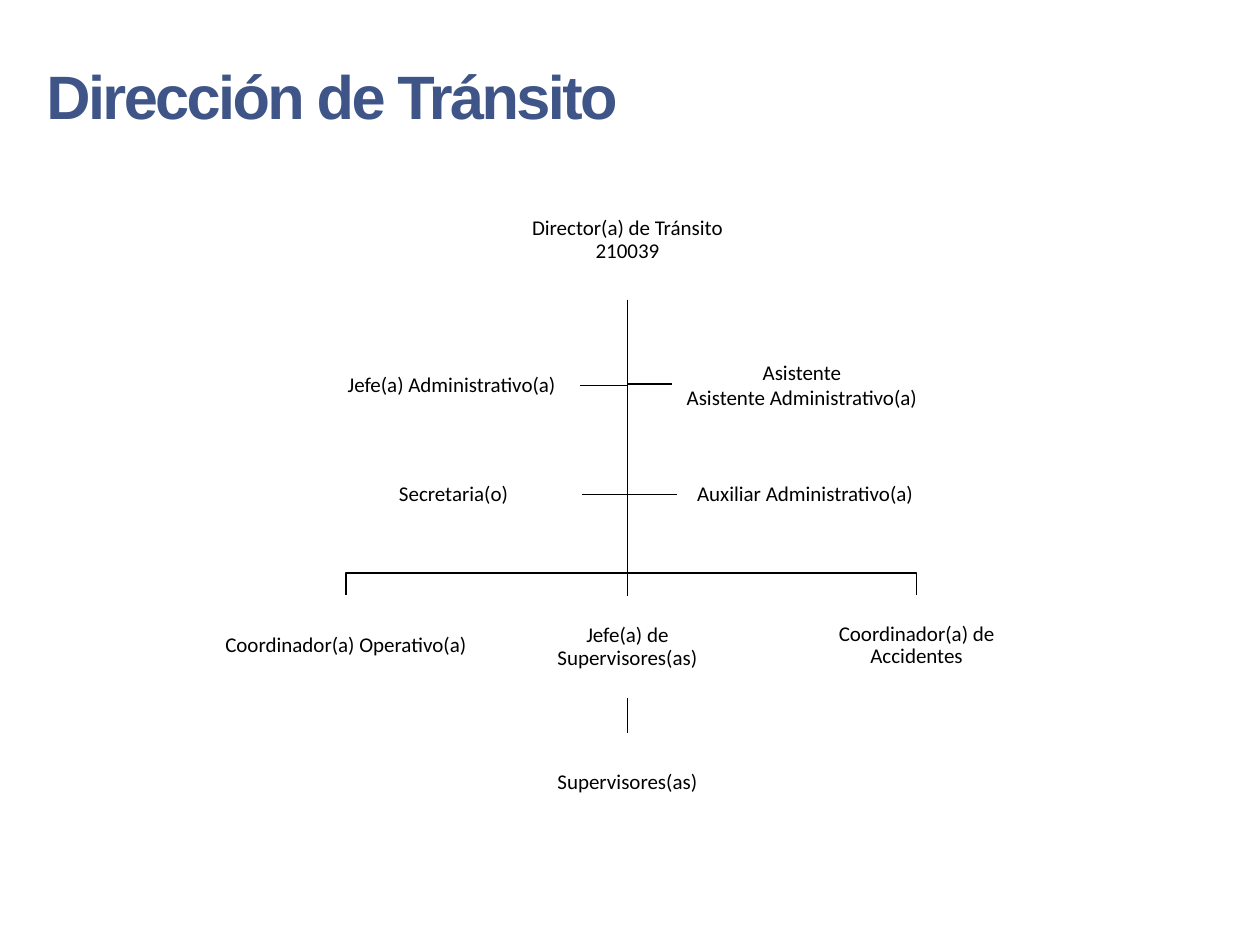
import dataclasses

import pptx
import pptx.dml.color
import pptx.enum.shapes
import pptx.enum.text
import pptx.oxml.ns
import pptx.util
from lxml import etree

Inches = pptx.util.Inches
Pt = pptx.util.Pt
Rgb = pptx.dml.color.RGBColor
Align = pptx.enum.text.PP_ALIGN
Anchor = pptx.enum.text.MSO_ANCHOR
Kind = pptx.enum.shapes.MSO_SHAPE
Wire = pptx.enum.shapes.MSO_CONNECTOR
TOP, LEFT, BOTTOM, RIGHT = range(4)


@dataclasses.dataclass(frozen=True)
class Theme:
    """Colours, fonts and sizes of the slide."""
    blue: Rgb = Rgb(0x3F, 0x55, 0x88)
    ink: Rgb = Rgb(0, 0, 0)
    paper: Rgb = Rgb(255, 255, 255)
    head: str = "Arial"
    body: str = "Calibri"
    big: int = 35
    small: int = 12
    rule: int = 1


THEME = Theme()

POSTS = {
    "director": (2.1, 0, 2.22, 0.95, 0.9, "Director(a) de Tránsito\n210039"),
    "admin": (0.8, 1.23, 2.03, 0.8, 0.9, "Jefe(a) Administrativo(a)"),
    "assistant": (3.56, 1.22, 2.07, 0.8, 1.0, "Asistente\nAsistente Administrativo(a)"),
    "clerk": (0.81, 2.21, 2.04, 0.57, 0.9, "Secretaria(o)"),
    "helper": (3.6, 2.21, 2.04, 0.57, 0.9, "Auxiliar Administrativo(a)"),
    "field": (0, 3.29, 1.95, 0.81, 0.9, "Coordinador(a) Operativo(a)"),
    "chief": (2.24, 3.3, 1.94, 0.81, 0.9, "Jefe(a) de\nSupervisores(as)"),
    "crash": (4.53, 3.29, 1.95, 0.81, 0.9, "Coordinador(a) de\nAccidentes"),
    "crew": (2.24, 4.39, 1.94, 0.78, 0.9, "Supervisores(as)"),
}

LINKS = (("director", "chief"), ("chief", "crew"))
SIDES = {
    "clerk": RIGHT, "assistant": LEFT, "helper": LEFT, "admin": RIGHT,
    "crash": TOP, "field": TOP,
}


def apply(thing, **style):
    """Set each named attribute on an object."""
    for name, value in style.items():
        setattr(thing, name, value)


def title(slide, box, words):
    """Place the slide title in its box."""
    frame = slide.shapes.add_textbox(*map(Inches, box)).text_frame
    frame.word_wrap = True
    run = frame.paragraphs[0].add_run()
    run.text = words
    apply(run.font, name=THEME.head, size=Pt(THEME.big), bold=True)
    run.font.color.rgb = THEME.blue
    run.font._element.set("spc", "-150")


def post(slide, box, lead, words):
    """Place one post of the chart as a white box with centred lines."""
    shape = slide.shapes.add_shape(Kind.RECTANGLE, *map(Inches, box))
    shape.shadow.inherit = False
    shape.fill.solid()
    shape.fill.fore_color.rgb = THEME.paper
    shape.line.fill.background()
    frame = shape.text_frame
    pad = Inches(0.01)
    apply(frame, word_wrap=True, vertical_anchor=Anchor.MIDDLE, text=words,
          margin_left=pad, margin_right=pad, margin_top=pad, margin_bottom=pad)
    for para in frame.paragraphs:
        apply(para, alignment=Align.CENTER, line_spacing=lead)
        apply(para.font, name=THEME.body, size=Pt(THEME.small))
        para.font.color.rgb = THEME.ink
    return shape


def ink(line):
    """Give a line the chart's colour and width."""
    line.color.rgb = THEME.ink
    line.width = Pt(THEME.rule)


def link(slide, upper, lower):
    """Join two stacked posts with a straight connector."""
    wire = slide.shapes.add_connector(Wire.STRAIGHT, 0, 0, 0, 0)
    wire.begin_connect(upper, BOTTOM)
    wire.end_connect(lower, TOP)
    ink(wire.line)
    etree.SubElement(wire._element.spPr, pptx.oxml.ns.qn("a:effectLst"))


def branch(slide, head, item, side, rise):
    """Draw a bent line from under the head post to a side of another."""
    trunk, start = head.left + head.width // 2, head.top + head.height
    if side == TOP:
        end, bar = item.left + item.width // 2, item.top - rise
        bends = [(trunk, bar), (end, bar), (end, item.top)]
    else:
        end = item.left + (item.width if side == RIGHT else 0)
        bar = item.top + item.height // 2
        bends = [(trunk, bar), (end, bar)]
    pen = slide.shapes.build_freeform(trunk, start)
    pen.add_line_segments(bends, close=False)
    shape = pen.convert_to_shape()
    shape.shadow.inherit = False
    shape.fill.background()
    ink(shape.line)


def chart(slide, box):
    """Place the posts and their links from the corner of the box."""
    x, y = box[:2]
    posts = {
        name: post(slide, (x + dx, y + dy, w, h), lead, words)
        for name, (dx, dy, w, h, lead, words) in POSTS.items()
    }
    for name, side in SIDES.items():
        branch(slide, posts["director"], posts[name], side, Inches(0.17))
    for upper, lower in LINKS:
        link(slide, posts[upper], posts[lower])


def main():
    """Build the slide and save it."""
    deck = pptx.Presentation()
    apply(deck, slide_width=Inches(10), slide_height=Inches(7.5))
    slide = deck.slides.add_slide(deck.slide_layouts[6])
    title(slide, (0.27, 0.41, 7.46, 0.69), "Dirección de Tránsito")
    chart(slide, (1.77, 1.43, 6.48, 5.17))
    deck.save("out.pptx")


if __name__ == "__main__":
    main()
